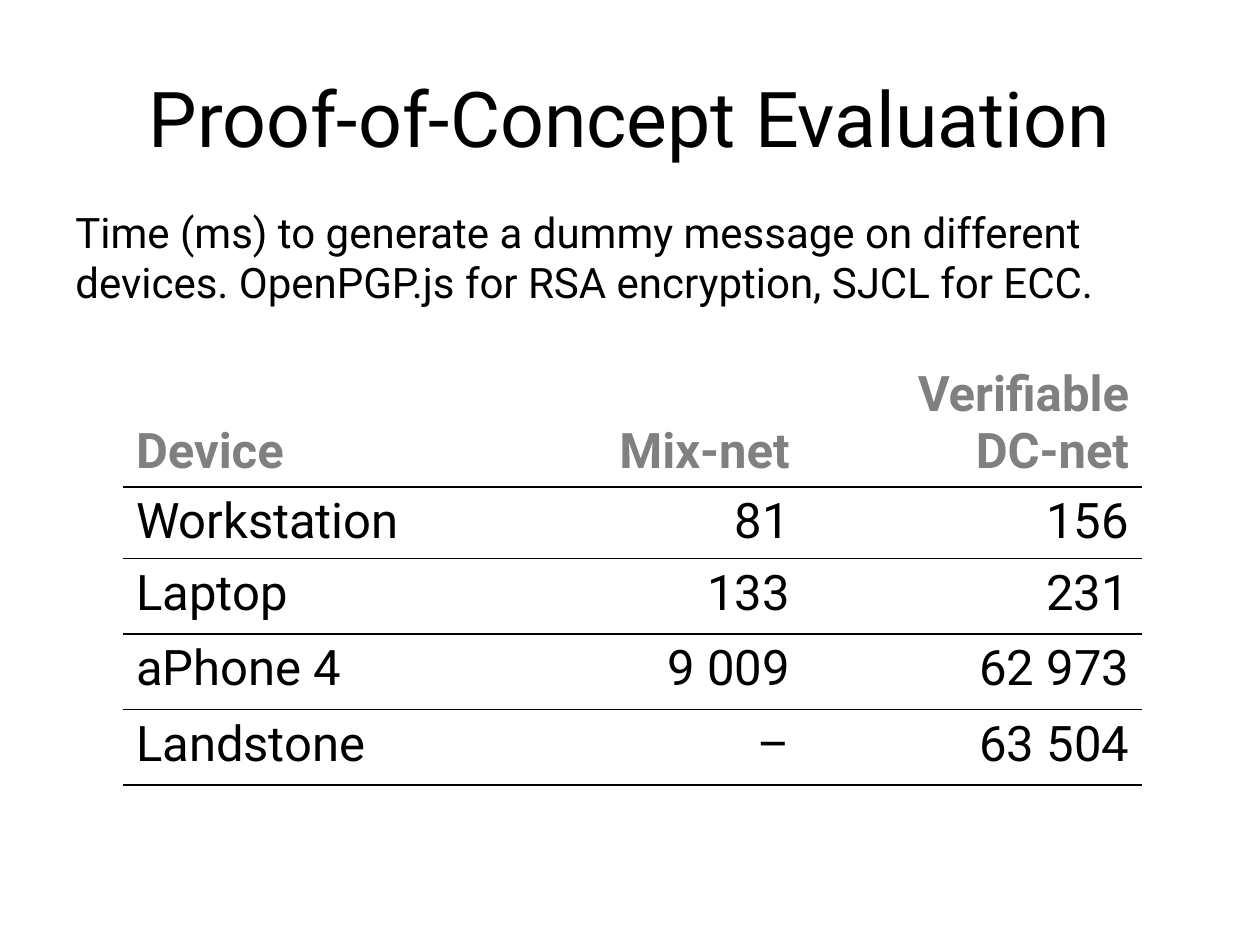
import pptx
import pptx.dml.color
import pptx.enum.text
import pptx.oxml
import pptx.oxml.ns
import pptx.util
from pptx.util import Inches

FONT = "Roboto"
COLORS = {"text": "000000", "heading": "808080", "rule": "000000"}
ALIGN = pptx.enum.text.PP_ALIGN
ANCHOR = pptx.enum.text.MSO_ANCHOR
PLAIN_TABLE_STYLE = "{2D5ABB26-0587-4C30-8999-92F81FD0307C}"

HEADINGS = ["Device", "Mix-net", "Verifiable\nDC-net"]
TIMINGS = [
    ["Workstation", "81", "156"],
    ["Laptop", "133", "231"],
    ["aPhone 4", "9 009", "62 973"],
    ["Landstone", "–", "63 504"],
]
ROW_HEIGHTS = [1, 0.56, 0.6, 0.6, 0.6]


def add_span(para, text, size, color="text", bold=False):
    span = para.add_run()
    span.text = text
    span.font.name = FONT
    span.font.size = pptx.util.Pt(size)
    span.font.bold = bold
    span.font.color.rgb = pptx.dml.color.RGBColor.from_string(COLORS[color])


def place_title(page, left, top, width, height):
    title = page.shapes.title
    title.left, title.top, title.width, title.height = left, top, width, height
    title.text_frame.vertical_anchor = ANCHOR.MIDDLE
    para = title.text_frame.paragraphs[0]
    para.alignment = ALIGN.CENTER
    add_span(para, "Proof-of-Concept Evaluation", 44)


def place_caption(page, left, top, width, height):
    box = page.shapes.add_textbox(left, top, width, height)
    box.text_frame.word_wrap = True
    add_span(
        box.text_frame.paragraphs[0],
        "Time (ms) to generate a dummy message on different devices. "
        "OpenPGP.js for RSA encryption, SJCL for ECC.",
        24,
    )


def rule_below(cell):
    line = pptx.oxml.parse_xml(
        f'<a:lnB {pptx.oxml.ns.nsdecls("a")} w="{pptx.util.Pt(1)}"><a:solidFill>'
        f'<a:srgbClr val="{COLORS["rule"]}"/></a:solidFill></a:lnB>'
    )
    cell._tc.get_or_add_tcPr().insert(0, line)


def fill_cell(cell, text, is_heading, alignment):
    cell.fill.background()
    cell.vertical_anchor = ANCHOR.BOTTOM if is_heading else ANCHOR.TOP
    frame = cell.text_frame
    for index, line in enumerate(text.split("\n")):
        para = frame.add_paragraph() if index else frame.paragraphs[0]
        para.alignment = alignment
        add_span(para, line, 28, "heading" if is_heading else "text", is_heading)
    rule_below(cell)


def place_timings(page, left, top, width, height):
    rows = [HEADINGS] + TIMINGS
    table = page.shapes.add_table(
        len(rows), len(HEADINGS), left, top, width, height
    ).table
    table.first_row = table.horz_banding = False
    style = table._tbl.tblPr.find(pptx.oxml.ns.qn("a:tableStyleId"))
    style.text = PLAIN_TABLE_STYLE
    for row, row_height in zip(table.rows, ROW_HEIGHTS):
        row.height = Inches(row_height)
    for r, texts in enumerate(rows):
        for c, text in enumerate(texts):
            alignment = ALIGN.RIGHT if c else ALIGN.LEFT
            fill_cell(table.cell(r, c), text, r == 0, alignment)


def main():
    deck = pptx.Presentation()
    deck.slide_width, deck.slide_height = Inches(10), Inches(7.5)
    page = deck.slides.add_slide(deck.slide_layouts.get_by_name("Title Only"))

    # Title and explanation
    place_title(page, Inches(0.5), Inches(0.3), Inches(9), Inches(1.25))
    place_caption(page, Inches(0.5), Inches(1.59), Inches(9), Inches(0.91))

    # Timings per device
    place_timings(
        page, Inches(0.98), Inches(2.83), Inches(8.08), Inches(sum(ROW_HEIGHTS))
    )
    deck.save("out.pptx")


if __name__ == "__main__":
    main()
